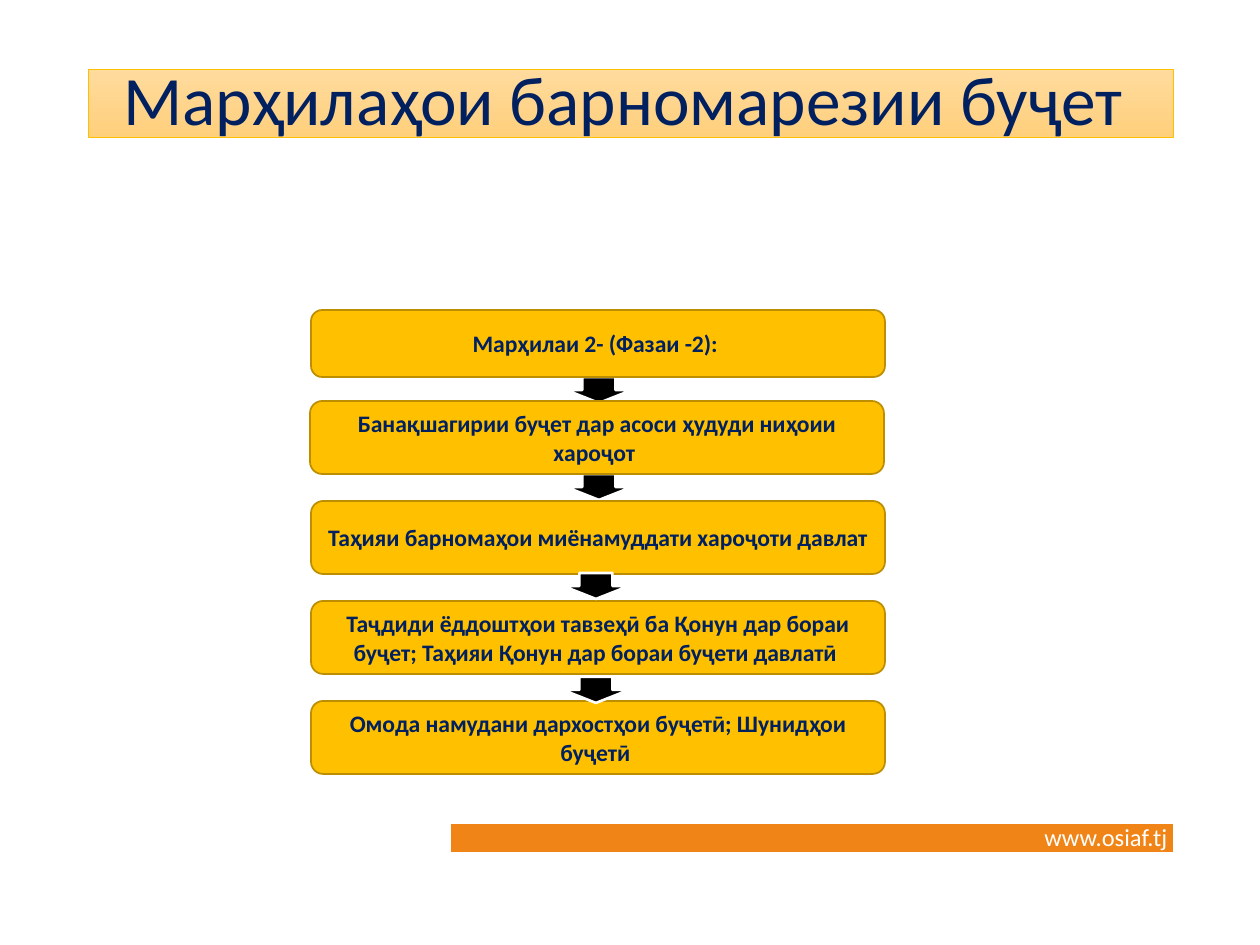
from dataclasses import dataclass

from lxml import etree
from pptx import Presentation
from pptx import util as u
from pptx.dml.color import RGBColor
from pptx.enum import shapes, text
from pptx.oxml import ns

SCALE = 914400 / 126


@dataclass(frozen=True)
class Theme:
    font: str = "Calibri"
    navy: str = "002060"
    amber: str = "FFC000"
    amber_dark: str = "BD8E00"
    title_top: str = "FFDB9E"
    title_bottom: str = "FFD07C"
    orange: str = "F08416"
    white: str = "FFFFFF"
    black: str = "000000"
    title_size: float = 39.6
    step_size: float = 13.5
    web_size: float = 14


THEME = Theme()
STEPS = [
    "Марҳилаи 2- (Фазаи -2): ",
    "Банақшагирии буҷет дар асоси ҳудуди ниҳоии хароҷот ",
    "Таҳияи барномаҳои миёнамуддати хароҷоти давлат ",
    "Таҷдиди ёддоштҳои тавзеҳӣ ба Қонун дар бораи буҷет; Таҳияи Қонун дар бораи буҷети давлатӣ ",
    "Омода намудани дархостҳои буҷетӣ; Шунидҳои буҷетӣ ",
]


def px(n):
    return u.Emu(round(n * SCALE))


def rgb(value):
    return RGBColor.from_string(value)


def assign(obj, values):
    for name, value in values.items():
        setattr(obj, name, value)


def write(sp, words, size, color, bold=False, align=None, **frame):
    tf = sp.text_frame
    assign(tf, {"word_wrap": True, "auto_size": text.MSO_AUTO_SIZE.NONE,
                "vertical_anchor": text.MSO_ANCHOR.MIDDLE, **frame})
    p = tf.paragraphs[0]
    p.alignment = align
    r = p.add_run()
    r.text = words
    assign(r.font, {"name": THEME.font, "size": u.Pt(size), "bold": bold})
    r.font.color.rgb = rgb(color)
    return p


def outline(sp, color, width):
    sp.line.color.rgb = rgb(color)
    sp.line.width = u.Pt(width)


def add_block(slide, kind, box, fill, line, width):
    sp = slide.shapes.add_shape(kind, *map(px, box))
    sp.shadow.inherit = False
    sp.fill.solid()
    sp.fill.fore_color.rgb = rgb(fill)
    outline(sp, line, width)
    return sp


def add_title(slide, box, words):
    sp = slide.shapes.title
    assign(sp, dict(zip(("left", "top", "width", "height"), map(px, box))))
    sp.fill.gradient()
    sp.fill.gradient_angle = 270
    for stop, color in zip(sp.fill.gradient_stops, (THEME.title_top, THEME.title_bottom)):
        stop.color.rgb = rgb(color)
    outline(sp, THEME.amber, 0.5)
    p = write(sp, words, THEME.title_size, THEME.navy, align=text.PP_ALIGN.CENTER)
    p.line_spacing = 0.9


def add_arrow(slide, x, y):
    add_block(slide, shapes.MSO_SHAPE.DOWN_ARROW, (x, y, 66, 26),
              THEME.black, THEME.white, 1.5)


def add_flow(slide, box, steps):
    left, top, width, height = box
    step_h, pitch = 73, 100
    first_y = top + height - step_h - pitch * (len(steps) - 2)
    tops = [top] + [first_y + pitch * i for i in range(len(steps) - 1)]
    for x, y in ((255, 67), (255, 164)):
        add_arrow(slide, left + x, top + y)
    for i, (y, words) in enumerate(zip(tops, steps)):
        x, h = left - (i == 1), step_h if i else 67
        sp = add_block(slide, shapes.MSO_SHAPE.ROUNDED_RECTANGLE, (x, y, width, h),
                       THEME.amber, THEME.amber_dark, 1)
        write(sp, words, THEME.step_size, THEME.navy, True, text.PP_ALIGN.CENTER)
    for x, y in ((252, 263), (252, 367)):
        add_arrow(slide, left + x, top + y)


def add_footer(slide, box, words):
    left, top, width, height = box
    y = px(top + height / 2)
    bar = slide.shapes.add_connector(shapes.MSO_CONNECTOR.STRAIGHT,
                                     px(left), y, px(left + width), y)
    outline(bar, THEME.orange, 16)
    etree.SubElement(bar._element.spPr, ns.qn("a:effectLst"))
    sp = slide.shapes.add_textbox(*map(px, (left + 581, top - 8, 200, 43)))
    write(sp, words, THEME.web_size, THEME.white,
          vertical_anchor=text.MSO_ANCHOR.TOP,
          auto_size=text.MSO_AUTO_SIZE.SHAPE_TO_FIT_TEXT)


def main():
    prs = Presentation()
    prs.slide_width, prs.slide_height = px(1260), px(945)
    slide = prs.slides.add_slide(prs.slide_layouts[5])
    add_footer(slide, (451, 824, 722, 28), "www.osiaf.tj")
    add_title(slide, (88, 69, 1086, 68), "Марҳилаҳои барномарезии буҷет ")
    add_flow(slide, (311, 310, 574, 464), STEPS)
    prs.save("out.pptx")


if __name__ == "__main__":
    main()
